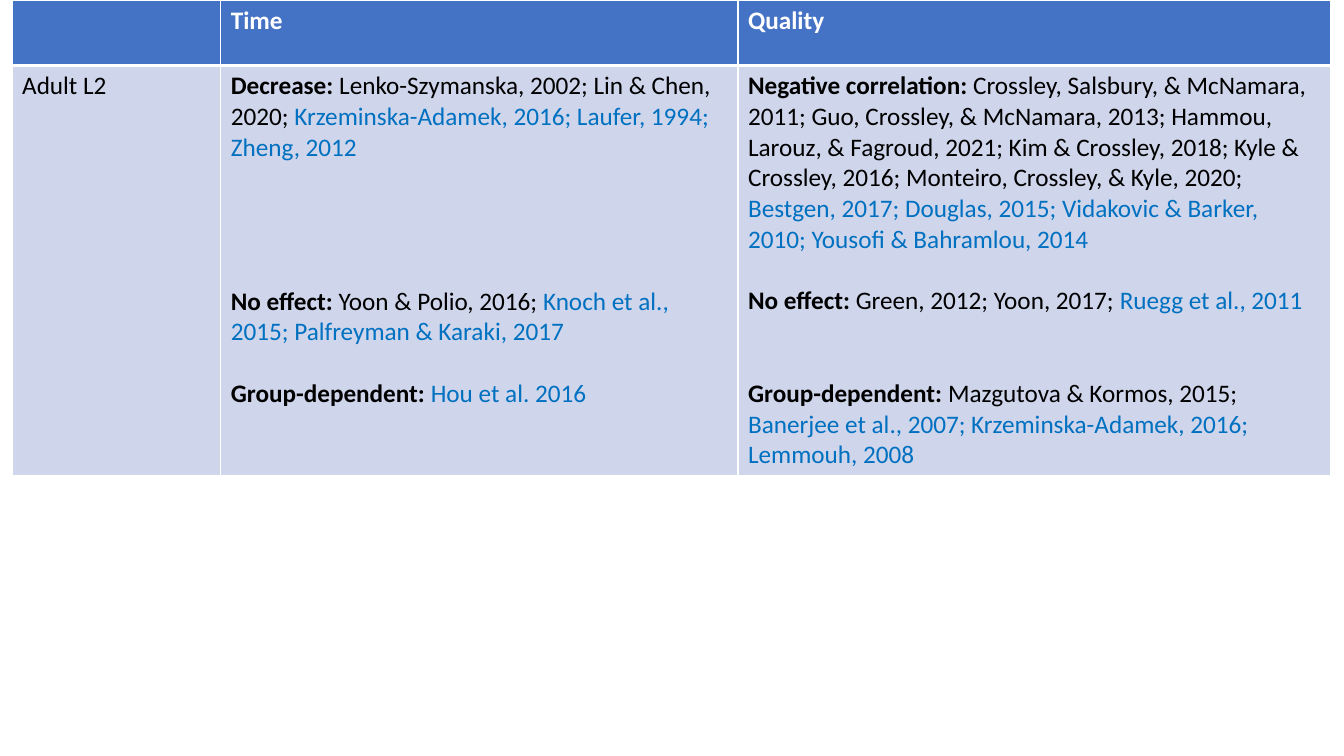
from lxml import etree
from pptx import Presentation
from pptx.dml.color import RGBColor
from pptx.oxml.ns import qn
from pptx.util import Inches, Pt

WHITE = RGBColor(0xFF, 0xFF, 0xFF)
BLACK = RGBColor(0, 0, 0)
HEADER_BLUE = RGBColor(0x44, 0x72, 0xC4)
BODY_BLUE = RGBColor(0xCF, 0xD5, 0xEA)
CITE_BLUE = RGBColor(0x00, 0x70, 0xC0)

LINE_PT = 22
COLUMNS = [2.07, 5.13, 5.88]
ROWS = [0.65, 4.05]

HEADER = {"bold": True, "color": WHITE}
PLAIN = {"bold": False, "color": BLACK}
LABEL = {"bold": True, "color": BLACK}
CITE = {"bold": False, "color": CITE_BLUE}

TIME = [
    (0, [("Decrease: ", LABEL),
         ("Lenko-Szymanska, 2002; Lin & Chen, 2020; ", PLAIN),
         ("Krzeminska-Adamek, 2016; Laufer, 1994; Zheng, 2012", CITE)]),
    (4, [("No effect: ", LABEL),
         ("Yoon & Polio, 2016; ", PLAIN),
         ("Knoch et al., 2015; Palfreyman & Karaki, 2017", CITE)]),
    (1, [("Group-dependent: ", LABEL),
         ("Hou et al. 2016", CITE)]),
]
QUALITY = [
    (0, [("Negative correlation: ", LABEL),
         ("Crossley, Salsbury, & McNamara, 2011; Guo, Crossley, & McNamara, 2013; "
          "Hammou, Larouz, & Fagroud, 2021; Kim & Crossley, 2018; "
          "Kyle & Crossley, 2016; Monteiro, Crossley, & Kyle, 2020; ", PLAIN),
         ("Bestgen, 2017; Douglas, 2015; Vidakovic & Barker, 2010; "
          "Yousofi & Bahramlou, 2014", CITE)]),
    (1, [("No effect: ", LABEL),
         ("Green, 2012; Yoon, 2017; ", PLAIN),
         ("Ruegg et al., 2011", CITE)]),
    (2, [("Group-dependent: ", LABEL),
         ("Mazgutova & Kormos, 2015; ", PLAIN),
         ("Banerjee et al., 2007; Krzeminska-Adamek, 2016; Lemmouh, 2008", CITE)]),
]
CELLS = [
    [[], [(0, [("Time", HEADER)])], [(0, [("Quality", HEADER)])]],
    [[(0, [("Adult L2", PLAIN)])], TIME, QUALITY],
]


class Deck:
    font = {"name": "Calibri", "size": Pt(18)}

    def __init__(self):
        self.prs = Presentation()
        self.prs.slide_width, self.prs.slide_height = Inches(13.33), Inches(7.5)
        self.s = self.prs.slides.add_slide(self.prs.slide_layouts[6])

    def text(self, tf, paragraphs):
        for i, (gap_lines, runs) in enumerate(paragraphs):
            p = tf.add_paragraph() if i else tf.paragraphs[0]
            p.space_before = Pt(gap_lines * LINE_PT)
            for words, style in runs:
                r = p.add_run()
                r.text = words
                for key, value in {**self.font, "bold": style["bold"]}.items():
                    setattr(r.font, key, value)
                r.font.color.rgb = style["color"]

    def borders(self, cell, widths):
        tc_pr = cell._tc.get_or_add_tcPr()
        for side, width in widths.items():
            ln = etree.SubElement(tc_pr, qn("a:ln" + side), w=str(Pt(width)))
            fill = etree.SubElement(ln, qn("a:solidFill"))
            etree.SubElement(fill, qn("a:srgbClr"), val=str(WHITE))

    def table(self, left, top, columns, rows, cells):
        frame = self.s.shapes.add_table(
            len(rows), len(columns), Inches(left), Inches(top),
            Inches(sum(columns)), Inches(sum(rows)))
        table = frame.table
        for column, width in zip(table.columns, columns):
            column.width = Inches(width)
        for i, (row, height) in enumerate(zip(table.rows, rows)):
            row.height = Inches(height)
            for cell, paragraphs in zip(row.cells, cells[i]):
                self.borders(cell, {"L": 1, "R": 1, "T": 3 if i else 1,
                                    "B": 1 if i else 3})
                cell.fill.solid()
                cell.fill.fore_color.rgb = BODY_BLUE if i else HEADER_BLUE
                self.text(cell.text_frame, paragraphs)


def main():
    deck = Deck()
    deck.table(0.12, 0, COLUMNS, ROWS, CELLS)
    deck.prs.save("out.pptx")


if __name__ == "__main__":
    main()
